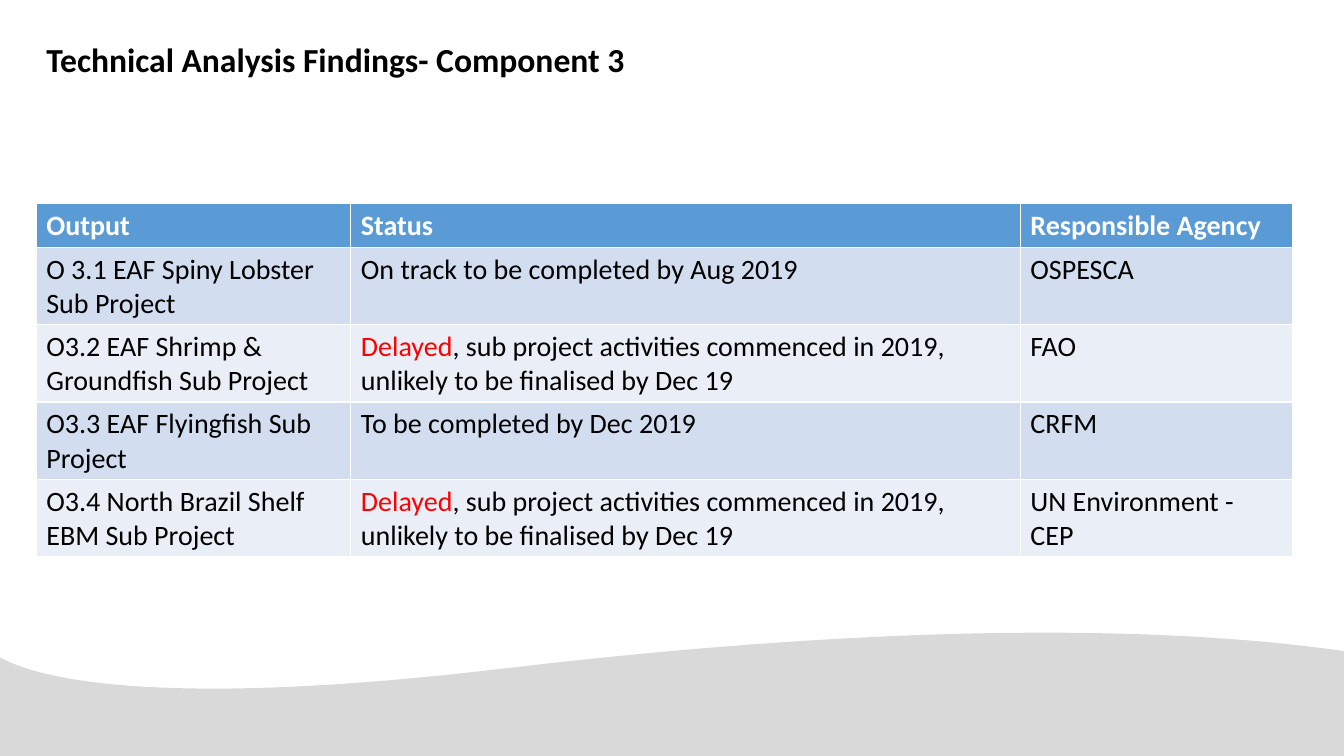
"""Build the Component 3 technical findings slide."""
from dataclasses import dataclass

from pptx import Presentation
from pptx.dml.color import RGBColor
from pptx.enum.text import MSO_ANCHOR, MSO_AUTO_SIZE, PP_ALIGN
from pptx.util import Inches, Pt


@dataclass(frozen=True)
class Theme:
    """Colours and type sizes of the slide."""
    font: str = "Calibri"
    title_size: int = 24
    table_size: int = 20
    ink: str = "000000"
    header_ink: str = "FFFFFF"
    alert: str = "FF0000"
    header_fill: str = "5B9BD5"
    bands: tuple = ("D2DEEF", "EAEFF7")
    wave: str = "D9D9D9"


ALERT_WORD = "Delayed"
LATE_STATUS = "Delayed, sub project activities commenced in 2019, unlikely to be finalised by Dec 19"
FINDINGS = [
    ("Output", "Status", "Responsible Agency"),
    ("O 3.1 EAF Spiny Lobster Sub Project", "On track to be completed by Aug 2019", "OSPESCA"),
    ("O3.2 EAF Shrimp & Groundfish Sub Project", LATE_STATUS, "FAO"),
    ("O3.3 EAF Flyingfish Sub Project", "To be completed by Dec 2019", "CRFM"),
    ("O3.4 North Brazil Shelf EBM Sub Project", LATE_STATUS, "UN Environment - CEP"),
]
COLUMN_WIDTHS = (3.12, 6.64, 2.7)
ROW_HEIGHTS = (0.43, 0.76, 0.76, 0.76, 0.76)
WAVE_START = (13.33, 6.46)
WAVE_CURVES = [
    ((11.65, 6.22), (9.02, 6.16), (5.02, 6.63)),
    ((1.33, 7.07), (0.26, 6.68), (-0.02, 6.51)),
]
WAVE_BASE = [(-0.02, 7.5), (13.33, 7.5)]


def curve_points(start, control_a, control_b, end, steps=40):
    """Return points along a cubic curve, without its start."""
    points = []
    for step in range(1, steps + 1):
        t = step / steps
        weights = ((1 - t) ** 3, 3 * t * (1 - t) ** 2, 3 * t * t * (1 - t), t ** 3)
        corners = (start, control_a, control_b, end)
        points.append(tuple(sum(w * corner[axis] for w, corner in zip(weights, corners))
                            for axis in (0, 1)))
    return points


class SlideBuilder:
    """Adds themed elements to the current slide."""

    def __init__(self, slide, theme):
        """Keep the slide and its theme."""
        self.slide = slide
        self.theme = theme

    def style_run(self, run, size, colour, bold=False):
        """Apply font, size, colour and weight to a run."""
        run.font.name = self.theme.font
        run.font.size = Pt(size)
        run.font.bold = bold
        run.font.color.rgb = RGBColor.from_string(colour)

    def wave(self, start, curves, base):
        """Draw the filled wave along the foot of the slide."""
        outline = []
        current = start
        for curve in curves:
            outline += curve_points(current, *curve)
            current = curve[-1]
        builder = self.slide.shapes.build_freeform(Inches(start[0]), Inches(start[1]))
        builder.add_line_segments([(Inches(x), Inches(y)) for x, y in outline + base])
        wave = builder.convert_to_shape()
        wave.shadow.inherit = False
        wave.fill.solid()
        wave.fill.fore_color.rgb = RGBColor.from_string(self.theme.wave)
        wave.line.fill.background()

    def title(self, text, left, top, width, height):
        """Fill and place the title placeholder."""
        heading = self.slide.shapes.title
        heading.left, heading.top = Inches(left), Inches(top)
        heading.width, heading.height = Inches(width), Inches(height)
        frame = heading.text_frame
        frame.text = text
        frame.word_wrap = True
        frame.auto_size = MSO_AUTO_SIZE.SHAPE_TO_FIT_TEXT
        frame.vertical_anchor = MSO_ANCHOR.TOP
        frame.paragraphs[0].alignment = PP_ALIGN.LEFT
        self.style_run(frame.paragraphs[0].runs[0], self.theme.title_size, self.theme.ink, True)

    def cell(self, cell, text, fill, ink, bold):
        """Fill a table cell, marking a leading alert word."""
        cell.fill.solid()
        cell.fill.fore_color.rgb = RGBColor.from_string(fill)
        paragraph = cell.text_frame.paragraphs[0]
        size = self.theme.table_size
        if text.startswith(ALERT_WORD):
            paragraph.text = ALERT_WORD
            self.style_run(paragraph.runs[0], size, self.theme.alert, bold)
            remainder = paragraph.add_run()
            remainder.text = text[len(ALERT_WORD):]
        else:
            paragraph.text = text
        self.style_run(paragraph.runs[-1], size, ink, bold)

    def table(self, rows, left, top, widths, heights):
        """Add a table with a header and banded rows."""
        findings = self.slide.shapes.add_table(
            len(rows), len(widths), Inches(left), Inches(top),
            Inches(sum(widths)), Inches(sum(heights))).table
        for column, width in zip(findings.columns, widths):
            column.width = Inches(width)
        for row, height in zip(findings.rows, heights):
            row.height = Inches(height)
        for r, texts in enumerate(rows):
            header = r == 0
            fill = self.theme.header_fill if header else self.theme.bands[(r - 1) % 2]
            ink = self.theme.header_ink if header else self.theme.ink
            for c, text in enumerate(texts):
                self.cell(findings.cell(r, c), text, fill, ink, header)


def main():
    """Build and save the presentation."""
    presentation = Presentation()
    presentation.slide_width = Inches(13.33)
    presentation.slide_height = Inches(7.5)
    slide = presentation.slides.add_slide(presentation.slide_layouts[5])
    builder = SlideBuilder(slide, Theme())
    builder.wave(WAVE_START, WAVE_CURVES, WAVE_BASE)
    builder.title("Technical Analysis Findings- Component 3", 0.36, 0.34, 6.13, 0.5)
    builder.table(FINDINGS, 0.36, 2.02, COLUMN_WIDTHS, ROW_HEIGHTS)
    presentation.save("out.pptx")


if __name__ == "__main__":
    main()
